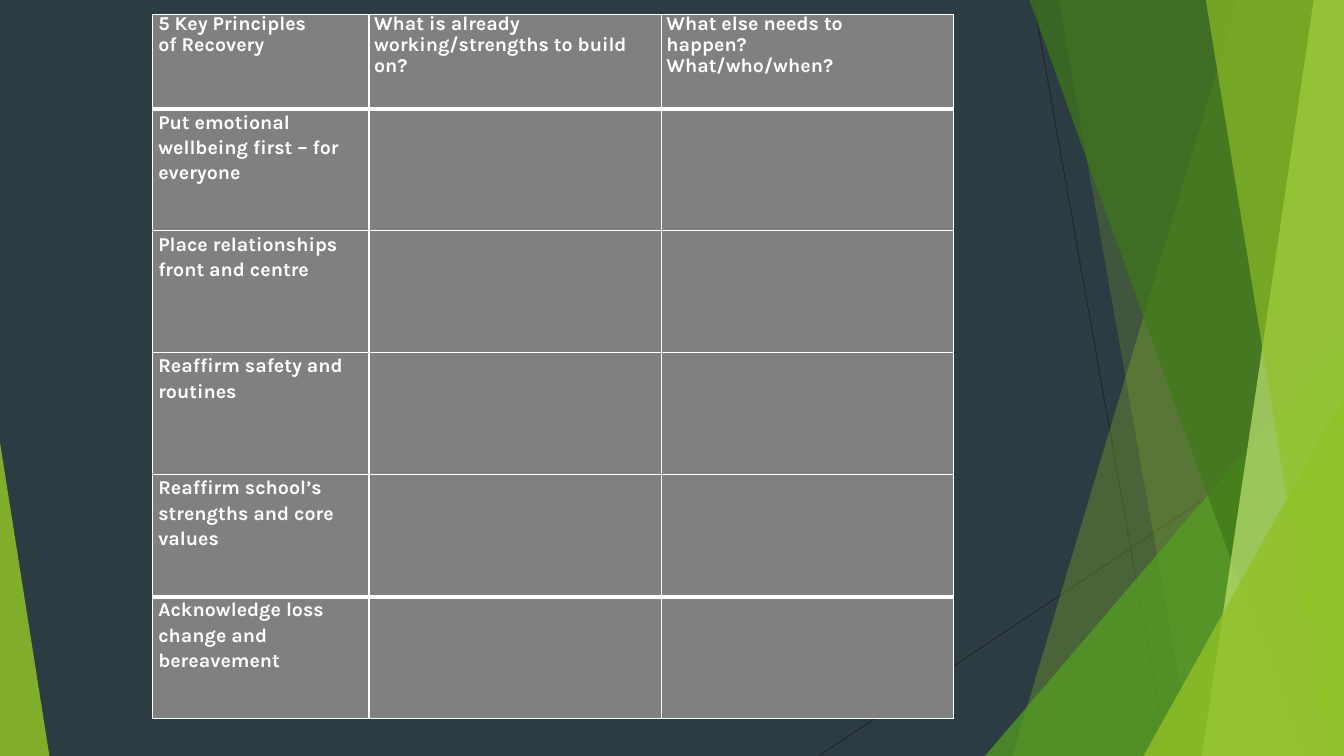
from lxml import etree
from pptx import Presentation
from pptx.dml.color import RGBColor
from pptx.enum.shapes import MSO_CONNECTOR as CONN, MSO_SHAPE as SHAPE
from pptx.oxml.ns import qn
from pptx.util import Inches, Pt

W, H = 13.33, 7.5
SLATE = RGBColor(0x2C, 0x3C, 0x43)
LINE = RGBColor(0x26, 0x26, 0x26)
LIME = RGBColor(0x90, 0xC2, 0x26)
GREEN = RGBColor(0x54, 0xA0, 0x21)
FOREST = RGBColor(0x3F, 0x78, 0x19)
PALE = RGBColor(0xC0, 0xE4, 0x74)
GREY = RGBColor(0x80, 0x80, 0x80)
WHITE = RGBColor(0xFF, 0xFF, 0xFF)

# Heading text with the right indent that shapes its wrapping
HEADINGS = [
    ("5 Key Principles of Recovery", 0.5),
    ("What is already working/strengths to build on?", 0.1),
    ("What else needs to happen? What/who/when?", 0.8),
]
PRINCIPLES = [
    "Put emotional wellbeing first – for everyone",
    "Place relationships front and centre",
    "Reaffirm safety and routines",
    "Reaffirm school’s strengths and core values",
    "Acknowledge loss change and bereavement",
]
COL_WIDTHS = [2.15, 2.9, 2.9]
HEAD_H, ROW_H = 0.94, 1.21


def paint(sp, color, opacity):
    sp.shadow.inherit = False
    sp.line.fill.background()
    sp.fill.solid()
    sp.fill.fore_color.rgb = color
    clr = sp.fill._xPr.find(".//" + qn("a:srgbClr"))
    etree.SubElement(clr, qn("a:alpha"), val=str(opacity * 1000))


def add_line(slide, x1, y1, x2, y2):
    line = slide.shapes.add_connector(CONN.STRAIGHT, *map(Inches, (x1, y1, x2, y2)))
    line.line.color.rgb = LINE
    line.line.width = Pt(0.75)
    etree.SubElement(line._element.spPr, qn("a:effectLst"))


def add_band(slide, top_x, bottom_x, color, opacity):
    """Full-height band from a slanted left edge to the slide's right edge."""
    points = [(top_x, 0), (W, 0), (W, H), (bottom_x, H)]
    points = [(Inches(x), Inches(y)) for x, y in points]
    builder = slide.shapes.build_freeform(*points[0])
    builder.add_line_segments(points[1:], close=True)
    paint(builder.convert_to_shape(), color, opacity)


def add_corner(slide, left, width, height, apex, color, opacity):
    """Triangle standing on the slide's bottom edge."""
    sp = slide.shapes.add_shape(
        SHAPE.ISOSCELES_TRIANGLE, Inches(left), Inches(H - height),
        Inches(width), Inches(height))
    sp.adjustments[0] = apex
    paint(sp, color, opacity)


def add_backdrop(slide):
    slide.background.fill.solid()
    slide.background.fill.fore_color.rgb = SLATE
    # Thin lines
    add_line(slide, 10.25, 0, 11.58, H)
    add_line(slide, W, 4.03, 8.12, H)
    # Overlapping facets, back to front
    add_band(slide, 12.28, 10.04, LIME, 30)
    add_band(slide, 10.5, 11.83, LIME, 20)
    add_corner(slide, 9.77, 3.56, 4.17, 1, GREEN, 72)
    add_band(slide, 10.21, 12.91, FOREST, 70)
    add_band(slide, 13.03, 11.92, PALE, 70)
    add_band(slide, 11.96, 13.18, LIME, 65)
    add_corner(slide, 11.34, 1.99, 3.57, 1, LIME, 80)
    add_corner(slide, 0, 0.49, 3.11, 0, LIME, 85)


def write(cell, text, spacing, indent=0.06, right=0.0):
    p = cell.text_frame.paragraphs[0]
    pPr = p._p.get_or_add_pPr()
    pPr.set("marL", str(Inches(indent)))
    pPr.set("marR", str(Inches(right)))
    p.line_spacing = spacing
    r = p.add_run()
    r.text = text
    r.font.name, r.font.size, r.font.bold = "Karla", Pt(14), True
    r.font.color.rgb = WHITE


def style_cell(cell, top, bottom):
    cell.margin_left = cell.margin_right = cell.margin_top = cell.margin_bottom = 0
    tcPr = cell._tc.get_or_add_tcPr()
    for side, width in (("L", 1), ("R", 1), ("T", top), ("B", bottom)):
        ln = etree.SubElement(tcPr, qn("a:ln" + side), w=str(Pt(width)))
        fill = etree.SubElement(ln, qn("a:solidFill"))
        etree.SubElement(fill, qn("a:srgbClr"), val=str(WHITE))
    cell.fill.solid()
    cell.fill.fore_color.rgb = GREY


def add_principles_table(slide, left, top):
    heights = [HEAD_H] + [ROW_H] * len(PRINCIPLES)
    n = len(heights)
    table = slide.shapes.add_table(
        n, len(COL_WIDTHS), Inches(left), Inches(top),
        Inches(sum(COL_WIDTHS)), Inches(sum(heights))).table
    for col, width in zip(table.columns, COL_WIDTHS):
        col.width = Inches(width)
    # Thick rules below the headings and above the last row
    rules = [3 if i in (1, n - 1) else 1 for i in range(n + 1)]
    for i, height in enumerate(heights):
        table.rows[i].height = Inches(height)
        for cell in table.rows[i].cells:
            style_cell(cell, rules[i], rules[i + 1])
    for j, (text, right) in enumerate(HEADINGS):
        write(table.cell(0, j), text, Pt(15), indent=0.05 if j else 0.06, right=right)
    for i, text in enumerate(PRINCIPLES, 1):
        write(table.cell(i, 0), text, 1.1)


def main():
    prs = Presentation()
    prs.slide_width, prs.slide_height = Inches(W), Inches(H)
    slide = prs.slides.add_slide(prs.slide_layouts[6])
    add_backdrop(slide)
    add_principles_table(slide, 1.51, 0.14)
    prs.save("out.pptx")


if __name__ == "__main__":
    main()
